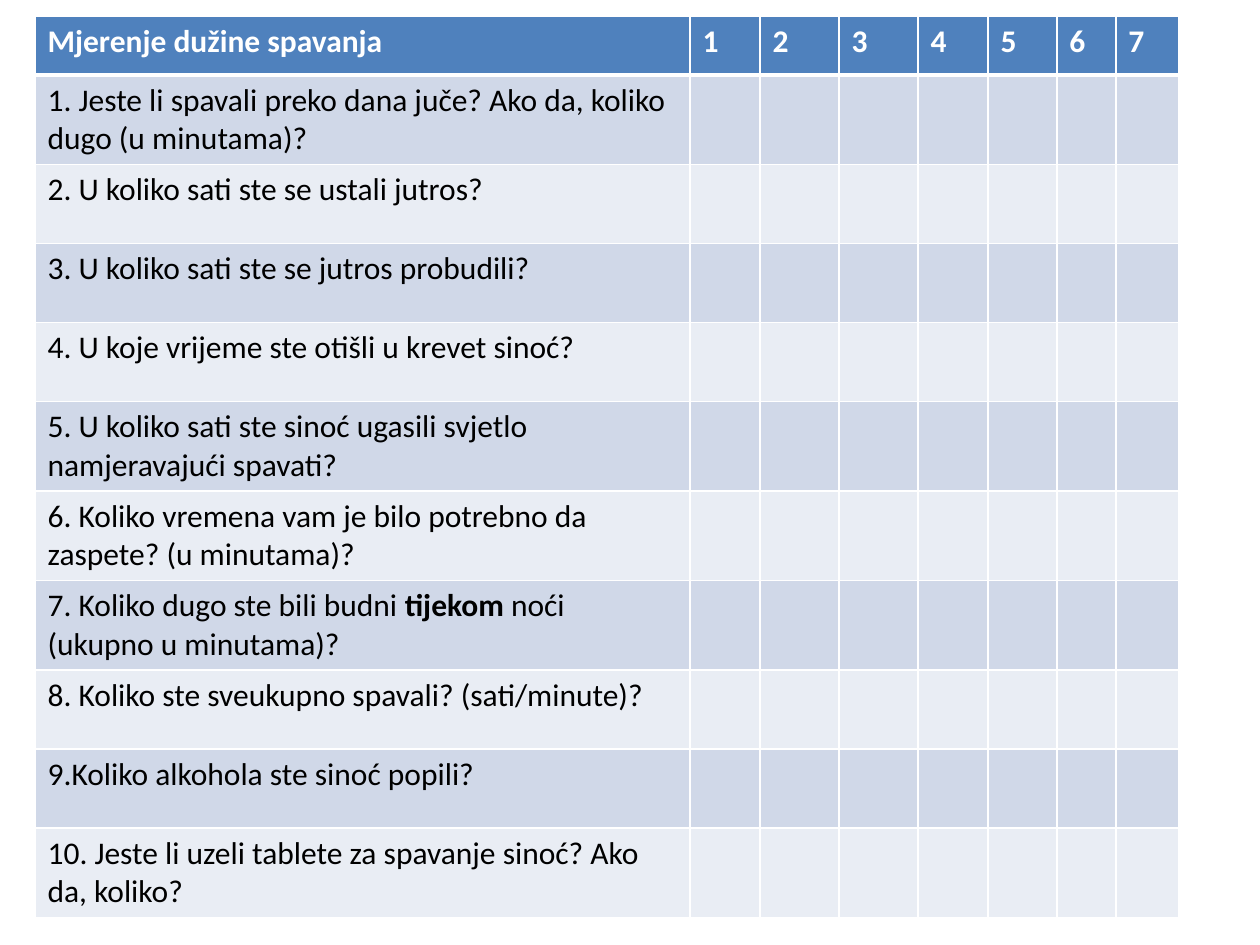
from dataclasses import dataclass

from lxml import etree
from pptx import Presentation
from pptx import util as u
from pptx.dml.color import RGBColor
from pptx.enum import text
from pptx.oxml.ns import qn

EMU_PER_PX = 914400 / 126
COLORS = {
    "header": "4F81BD",
    "odd": "D0D8E8",
    "even": "E9EDF4",
    "rule": "FFFFFF",
    "header_text": "FFFFFF",
    "body_text": "000000",
}
TITLE = "Mjerenje dužine spavanja"
DAYS = [str(day) for day in range(1, 8)]
EMPHASIS = "tijekom"
QUESTIONS = [
    "1. Jeste li spavali preko dana juče? Ako da, koliko dugo (u minutama)?",
    "2. U koliko sati ste se ustali jutros?",
    "3. U koliko sati ste se jutros probudili?",
    "4. U koje vrijeme ste otišli u krevet sinoć?",
    "5. U koliko sati ste sinoć ugasili svjetlo namjeravajući spavati?",
    "6. Koliko vremena vam je bilo potrebno da zaspete? (u minutama)?",
    "7. Koliko dugo ste bili budni tijekom noći (ukupno u minutama)?",
    "8. Koliko ste sveukupno spavali? (sati/minute)?",
    "9.Koliko alkohola ste sinoć popili?",
    "10. Jeste li uzeli tablete za spavanje sinoć? Ako da, koliko?",
]
COLUMN_WIDTHS = [655, 70, 79, 79, 70, 69, 59, 63]
HEADER_HEIGHT, QUESTION_HEIGHT = 59, 79


@dataclass
class DiaryRow:
    entries: list[str]
    height: int
    fill: str
    ink: str
    bold: bool = False
    top_rule: int = 1
    bottom_rule: int = 1


def px(length: int) -> int:
    return round(length * EMU_PER_PX)


def draw_rules(cell, row: DiaryRow) -> None:
    properties = cell._tc.get_or_add_tcPr()
    widths = {"lnL": 1, "lnR": 1, "lnT": row.top_rule, "lnB": row.bottom_rule}
    for side, width in widths.items():
        rule = etree.SubElement(properties, qn(f"a:{side}"), w=str(u.Pt(width)))
        solid = etree.SubElement(rule, qn("a:solidFill"))
        etree.SubElement(solid, qn("a:srgbClr"), val=COLORS["rule"])


def write_entry(cell, entry: str, row: DiaryRow) -> None:
    paragraph = cell.text_frame.paragraphs[0]
    paragraph.alignment = text.PP_ALIGN.LEFT
    before, emphasis, after = entry.partition(EMPHASIS)
    for part in filter(None, (before, emphasis, after)):
        run = paragraph.add_run()
        run.text = part
        font_format = {
            "name": "Calibri",
            "size": u.Pt(18),
            "bold": row.bold or part == EMPHASIS,
        }
        for attribute, value in font_format.items():
            setattr(run.font, attribute, value)
        run.font.color.rgb = RGBColor.from_string(COLORS[row.ink])


def draw_diary(slide, left: int, top: int, rows: list[DiaryRow]) -> None:
    diary = slide.shapes.add_table(
        len(rows), len(COLUMN_WIDTHS), px(left), px(top),
        px(sum(COLUMN_WIDTHS)), px(sum(row.height for row in rows)),
    ).table
    diary.horz_banding = False
    for column, width in zip(diary.columns, COLUMN_WIDTHS):
        column.width = px(width)
    for table_row, row in zip(diary.rows, rows):
        table_row.height = px(row.height)
        for cell, entry in zip(table_row.cells, row.entries):
            draw_rules(cell, row)
            cell.fill.solid()
            cell.fill.fore_color.rgb = RGBColor.from_string(COLORS[row.fill])
            write_entry(cell, entry, row)


def main() -> None:
    presentation = Presentation()
    presentation.slide_width, presentation.slide_height = px(1260), px(945)
    slide = presentation.slides.add_slide(presentation.slide_layouts[6])

    # Header row, then one banded row per question
    rows = [DiaryRow([TITLE, *DAYS], HEADER_HEIGHT, "header", "header_text",
                     bold=True, bottom_rule=3)]
    for number, question in enumerate(QUESTIONS, start=1):
        rows.append(DiaryRow(
            [question] + [""] * len(DAYS), QUESTION_HEIGHT,
            "odd" if number % 2 else "even", "body_text",
            top_rule=3 if number == 1 else 1,
        ))
    draw_diary(slide, 35, 16, rows)

    presentation.save("out.pptx")


if __name__ == "__main__":
    main()
